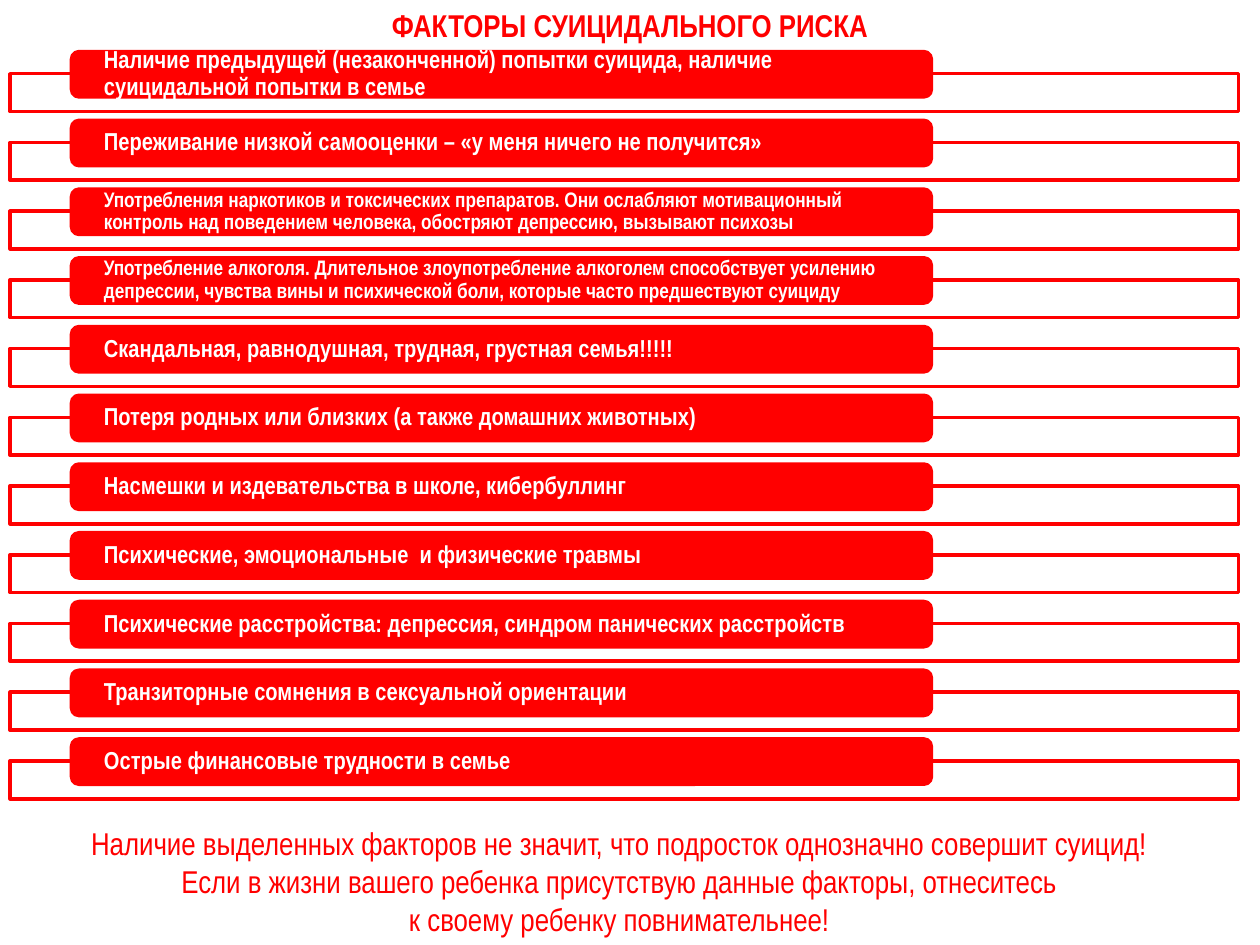
from pptx import Presentation
from pptx import util as u
from pptx.dml.color import RGBColor
from pptx.enum import shapes, text
from pptx.oxml.ns import qn
from lxml import etree

RED, WHITE = "FF0000", "FFFFFF"
TITLE = "ФАКТОРЫ СУИЦИДАЛЬНОГО РИСКА"
FACTORS = [
    ("Наличие предыдущей (незаконченной) попытки суицида, наличие суицидальной попытки в семье", 14),
    ("Переживание низкой самооценки – «у меня ничего не получится»", 14),
    ("Употребления наркотиков и токсических препаратов. Они ослабляют мотивационный контроль "
     "над поведением человека, обостряют депрессию, вызывают психозы", 12),
    ("Употребление алкоголя. Длительное злоупотребление алкоголем способствует усилению депрессии, "
     "чувства вины и психической боли, которые часто предшествуют суициду", 12),
    ("Скандальная, равнодушная, трудная, грустная семья!!!!!", 14),
    ("Потеря родных или близких (а также домашних животных)", 14),
    ("Насмешки и издевательства в школе, кибербуллинг", 14),
    ("Психические, эмоциональные  и физические травмы", 14),
    ("Психические расстройства: депрессия, синдром панических расстройств", 14),
    ("Транзиторные сомнения в сексуальной ориентации", 14),
    ("Острые финансовые трудности в семье", 14),
]
CONCLUSION = [
    "Наличие выделенных факторов не значит, что подросток однозначно совершит суицид!",
    "Если в жизни вашего ребенка присутствую данные факторы, отнеситесь",
    "к своему ребенку повнимательнее!",
]


def rgb(value):
    return RGBColor.from_string(value)


def set_attrs(obj, values):
    for name, value in values.items():
        setattr(obj, name, value)


def inches(*box):
    return [u.Inches(v) for v in box]


def write(sp, lines, size, color, bold=False, align=text.PP_ALIGN.CENTER,
          spacing=1.0, **frame):
    tf = sp.text_frame
    set_attrs(tf, {"word_wrap": True, "auto_size": text.MSO_AUTO_SIZE.NONE, **frame})
    for i, line in enumerate(lines):
        p = tf.add_paragraph() if i else tf.paragraphs[0]
        set_attrs(p, {"alignment": align, "line_spacing": spacing})
        r = p.add_run()
        r.text = line
        set_attrs(r.font, {"name": "Arial Narrow", "size": u.Pt(size), "bold": bold})
        r.font.color.rgb = rgb(color)


def add_box(s, kind, box, fill):
    sp = s.shapes.add_shape(kind, *inches(*box))
    sp.shadow.inherit = False
    sp.fill.solid()
    sp.fill.fore_color.rgb = rgb(fill)
    sp.line.color.rgb = rgb(RED)
    sp.line.width = u.Pt(2)
    return sp


def add_title(s, box):
    sp = s.shapes.title
    set_attrs(sp, dict(zip(("left", "top", "width", "height"), inches(*box))))
    write(sp, [TITLE], 18, RED, True, vertical_anchor=text.MSO_ANCHOR.MIDDLE)


def add_factor_list(s, left, top, width, height):
    label_h, frame_h, frame_drop = 0.36, 0.3, 0.175
    pitch = (height - frame_drop - frame_h) / (len(FACTORS) - 1)
    for i, (factor, size) in enumerate(FACTORS):
        y = top + i * pitch
        # Outlined strip behind the label
        strip = add_box(s, shapes.MSO_SHAPE.RECTANGLE,
                        (left, y + frame_drop, width, frame_h), WHITE)
        color = strip.fill._xPr.find(".//" + qn("a:srgbClr"))
        etree.SubElement(color, qn("a:alpha"), val="90000")
        # Red label: 5% indent, 70% of the strip width
        label = add_box(s, shapes.MSO_SHAPE.ROUNDED_RECTANGLE,
                        (left + width * 0.05, y, width * 0.7, label_h), RED)
        write(label, [factor], size, WHITE, True, text.PP_ALIGN.LEFT, 0.9,
              vertical_anchor=text.MSO_ANCHOR.MIDDLE,
              margin_left=u.Inches(0.24), margin_right=u.Inches(0.24),
              margin_top=0, margin_bottom=0)


def add_conclusion(s, box):
    sp = s.shapes.add_textbox(*inches(*box))
    write(sp, CONCLUSION, 18, RED)


def main():
    prs = Presentation()
    prs.slide_width, prs.slide_height = inches(10, 7.5)
    s = prs.slides.add_slide(prs.slide_layouts[5])
    add_title(s, (0, 0, 10, 0.4))
    add_factor_list(s, 0.08, 0.41, 9.75, 5.93)
    add_conclusion(s, (0, 6.49, 9.83, 1.01))
    prs.save("out.pptx")


if __name__ == "__main__":
    main()
